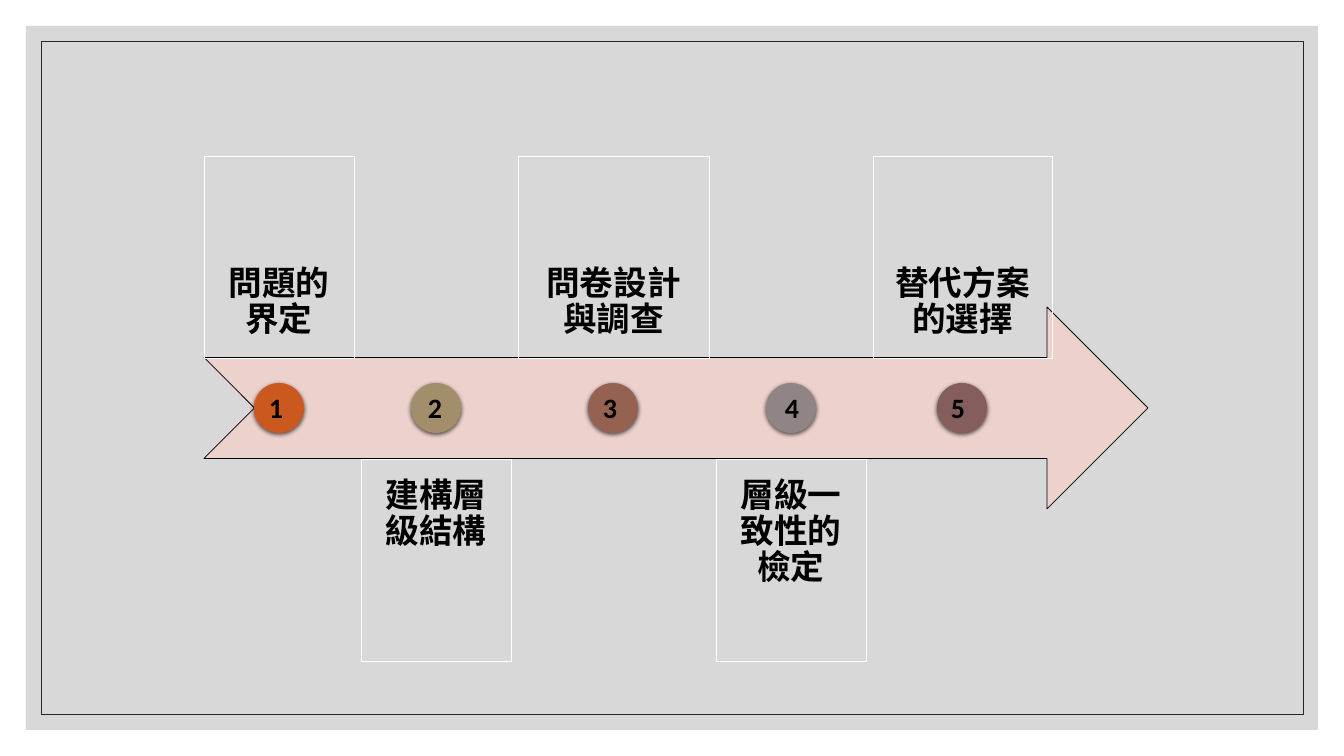
from lxml import etree
from pptx import Presentation
from pptx.dml.color import RGBColor
from pptx.enum.shapes import MSO_SHAPE
from pptx.enum.text import MSO_ANCHOR, PP_ALIGN
from pptx.oxml.ns import qn
from pptx.util import Emu, Pt

RECTANGLE = MSO_SHAPE.RECTANGLE
OVAL = MSO_SHAPE.OVAL
NOTCHED_ARROW = MSO_SHAPE.NOTCHED_RIGHT_ARROW
TOP, BOTTOM = MSO_ANCHOR.TOP, MSO_ANCHOR.BOTTOM
LEFT, CENTER = PP_ALIGN.LEFT, PP_ALIGN.CENTER

BLACK = RGBColor(0x00, 0x00, 0x00)
WHITE = RGBColor(0xFF, 0xFF, 0xFF)
GRAY = RGBColor(0xBF, 0xBF, 0xBF)
CHARCOAL = RGBColor(0x26, 0x26, 0x26)
PINK = RGBColor(0xEC, 0xD1, 0xCD)
ORANGE = RGBColor(0xCB, 0x58, 0x1F)
SAND = RGBColor(0xA2, 0x8E, 0x6A)
BROWN = RGBColor(0x95, 0x62, 0x51)
TAUPE = RGBColor(0x91, 0x84, 0x85)
MAUVE = RGBColor(0x85, 0x5D, 0x5D)

SLIDE_WIDTH, SLIDE_HEIGHT = 1344, 756
EMU_PER_PX = 12192000 / SLIDE_WIDTH
LABEL_FONT, NUMBER_FONT = "Noto Sans CJK SC", "Calibri"

ARROW_LEFT, ARROW_TOP, ARROW_WIDTH, ARROW_HEIGHT = 204, 307, 944, 202
LABEL_TOPS = (156, 459)
LABEL_ANCHORS = (BOTTOM, TOP)
LABEL_GAP, LABEL_INSET = 7, 19
DOT_SIZE, DOT_TOP = 50, 383
NUMBER_TOP, NUMBER_WIDTH, NUMBER_HEIGHT = 386, 35, 44

STEPS = [
    ("問題的界定", 150, ORANGE, 259),
    ("建構層級結構", 150, SAND, 418),
    ("問卷設計與調查", 191, BROWN, 593),
    ("層級一致性的檢定", 150, TAUPE, 775),
    ("替代方案的選擇", 179, MAUVE, 941),
]


def px(length):
    return Emu(round(length * EMU_PER_PX))


class ProcessSlide:
    def __init__(self, presentation):
        self.slide = presentation.slides.add_slide(presentation.slide_layouts[6])

    def shape(self, kind, left, top, width, height, fill=None, line=None):
        shape = self.slide.shapes.add_shape(kind, px(left), px(top), px(width), px(height))
        shape.shadow.inherit = False
        if fill is None:
            shape.fill.background()
        else:
            shape.fill.solid()
            shape.fill.fore_color.rgb = fill
        if line is None:
            shape.line.fill.background()
        else:
            shape.line.color.rgb = line
            shape.line.width = Pt(0.5)
        return shape

    def backdrop(self):
        panel = self.shape(RECTANGLE, 26, 26, 1292, 704, fill=GRAY)
        color = panel._element.spPr.find(qn("a:solidFill")).find(qn("a:srgbClr"))
        etree.SubElement(color, qn("a:alpha"), val="60000")
        self.shape(RECTANGLE, 41, 41, 1262, 673, line=CHARCOAL)

    def set_text(self, shape, text, size, font_name, alignment):
        paragraph = shape.text_frame.paragraphs[0]
        paragraph.text = text
        paragraph.alignment = alignment
        font = paragraph.font
        font.size = Pt(size)
        font.bold = True
        font.name = font_name
        font.color.rgb = BLACK
        properties = paragraph._p.pPr.find(qn("a:defRPr"))
        etree.SubElement(properties, qn("a:ea"), typeface=font_name)
        return paragraph

    def label(self, text, left, top, width, anchor):
        box = self.shape(RECTANGLE, left, top, width, ARROW_HEIGHT, line=WHITE)
        frame = box.text_frame
        frame.word_wrap = True
        frame.vertical_anchor = anchor
        frame.margin_left = frame.margin_right = px(LABEL_INSET)
        frame.margin_top = frame.margin_bottom = px(LABEL_INSET)
        self.set_text(box, text, 24, LABEL_FONT, CENTER).line_spacing = 0.9

    def dot(self, center, color):
        dot = self.shape(OVAL, center - DOT_SIZE // 2, DOT_TOP, DOT_SIZE, DOT_SIZE, fill=color)
        effects = dot._element.spPr.find(qn("a:effectLst"))
        shadow = etree.SubElement(effects, qn("a:outerShdw"), blurRad=str(Pt(3)),
                                  dist=str(Pt(1)), dir="5400000", algn="ctr", rotWithShape="0")
        shade = etree.SubElement(shadow, qn("a:srgbClr"), val=str(BLACK))
        etree.SubElement(shade, qn("a:alpha"), val="63000")

    def number(self, value, left):
        box = self.slide.shapes.add_textbox(px(left), px(NUMBER_TOP),
                                            px(NUMBER_WIDTH), px(NUMBER_HEIGHT))
        box.text_frame.word_wrap = True
        self.set_text(box, str(value), 20, NUMBER_FONT, LEFT)


def main():
    presentation = Presentation()
    presentation.slide_width = px(SLIDE_WIDTH)
    presentation.slide_height = px(SLIDE_HEIGHT)

    process = ProcessSlide(presentation)
    process.backdrop()
    process.shape(NOTCHED_ARROW, ARROW_LEFT, ARROW_TOP, ARROW_WIDTH, ARROW_HEIGHT,
                  fill=PINK, line=BLACK)
    left = ARROW_LEFT
    for index, (text, width, color, number_left) in enumerate(STEPS):
        side = index % 2
        process.label(text, left, LABEL_TOPS[side], width, LABEL_ANCHORS[side])
        process.dot(left + width // 2, color)
        left += width + LABEL_GAP
    for value, (text, width, color, number_left) in enumerate(STEPS, start=1):
        process.number(value, number_left)

    presentation.save("out.pptx")


if __name__ == "__main__":
    main()
